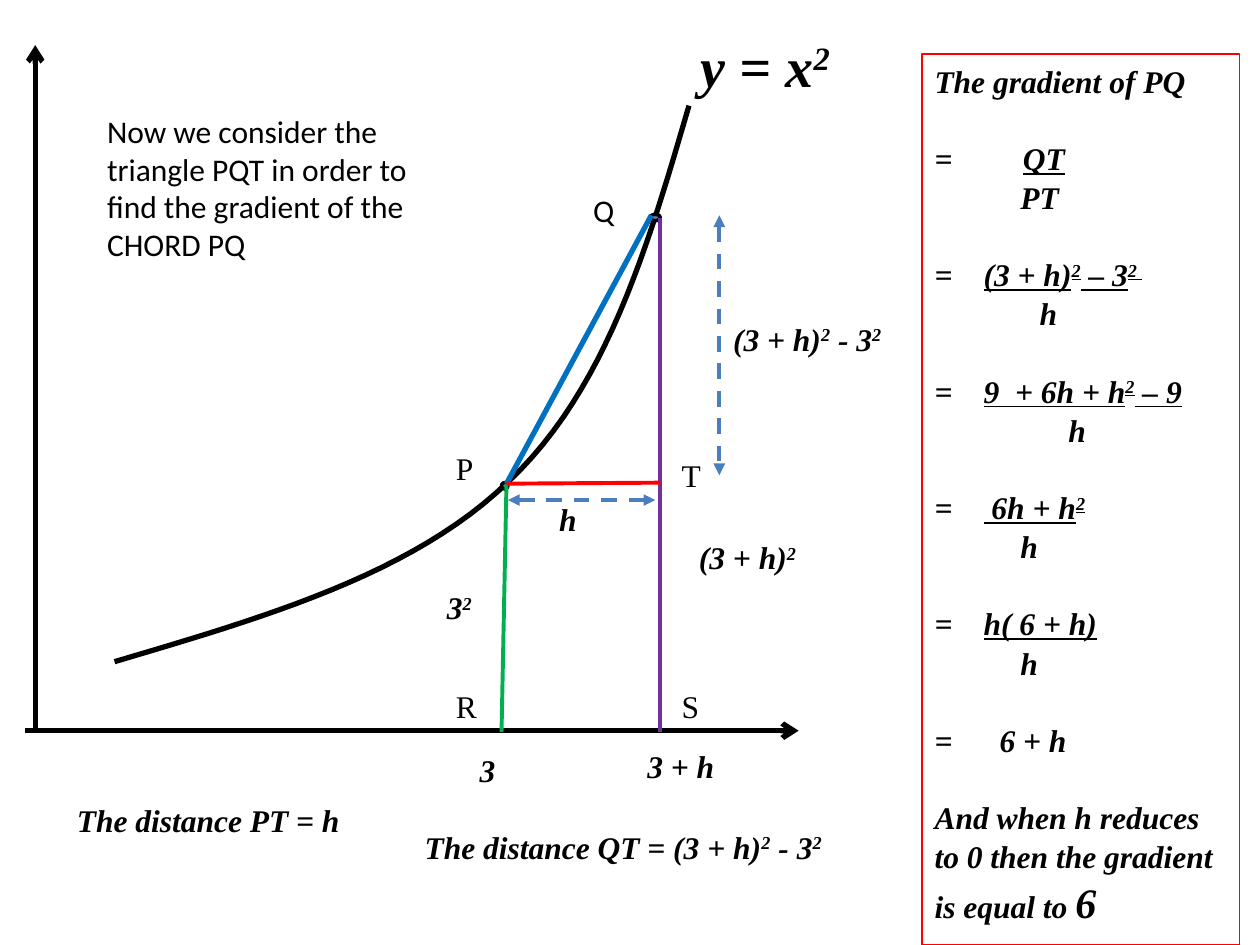
from lxml.etree import SubElement
from pptx import Presentation
from pptx.dml.color import RGBColor
from pptx.enum.dml import MSO_LINE
from pptx.enum.shapes import MSO_CONNECTOR, MSO_SHAPE
from pptx.enum.text import MSO_ANCHOR, MSO_AUTO_SIZE, PP_ALIGN
from pptx.oxml.ns import qn
from pptx.util import Cm, Pt


class Theme:
    ink = RGBColor.from_string("000000")
    red = RGBColor.from_string("FF0000")
    blue = RGBColor.from_string("0070C0")
    green = RGBColor.from_string("00B050")
    plum = RGBColor.from_string("7030A0")
    dash = RGBColor.from_string("4B7EBC")
    dot = RGBColor.from_string("4F81BD")
    serif = "Times New Roman"
    sans = "Calibri"
    text, big, head = Pt(18), Pt(24), Pt(32)
    thin, mid, thick = Pt(0.75), Pt(2.25), Pt(3)


def write(para, text, size=Theme.text, font=Theme.serif, strong=True, under=False):
    for i, part in enumerate(text.split("^")):
        if not part:
            continue
        run = para.add_run()
        run.text = part
        run.font.size = size
        run.font.name = font
        run.font.bold = run.font.italic = strong
        run.font.underline = under
        run.font.color.rgb = Theme.ink
        if i % 2:
            run._r.get_or_add_rPr().set("baseline", "30000")


def draw(start, end, color, width, head=None, tail=None):
    line = slide.shapes.add_connector(
        MSO_CONNECTOR.STRAIGHT, *(Cm(v) for v in start + end))
    line.line.color.rgb = color
    line.line.width = width
    if head:
        line.line.dash_style = MSO_LINE.DASH
    props = line.line._get_or_add_ln()
    for tag, kind in (("a:headEnd", head), ("a:tailEnd", tail)):
        if kind:
            SubElement(props, qn(tag)).set("type", kind)
    SubElement(line._element.spPr, qn("a:effectLst"))


deck = Presentation()
deck.slide_width, deck.slide_height = Cm(25.4), Cm(19.05)
slide = deck.slides.add_slide(deck.slide_layouts[5])

title = slide.shapes.title
title.left, title.top, title.width, title.height = Cm(13.87), Cm(0.51), Cm(4.22), Cm(1.63)
title.text_frame.vertical_anchor = MSO_ANCHOR.TOP
title.text_frame.auto_size = MSO_AUTO_SIZE.NONE
title.text_frame.paragraphs[0].alignment = PP_ALIGN.LEFT
write(title.text_frame.paragraphs[0], "y = x^2", size=Theme.head)

bends = [
    [(2.31, 13.34), (5.31, 12.45), (8.33, 11.58), (10.26, 9.7)],
    [(10.26, 9.7), (12.22, 7.85), (13.06, 4.98), (13.89, 2.13)],
]
steps = 24
points = []
for bend in bends:
    for i in range(1, steps + 1):
        t = i / steps
        mix = ((1 - t) ** 3, 3 * t * (1 - t) ** 2, 3 * t * t * (1 - t), t ** 3)
        points.append(tuple(
            Cm(sum(m * p[axis] for m, p in zip(mix, bend))) for axis in (0, 1)))
pen = slide.shapes.build_freeform(*(Cm(v) for v in bends[0][0]))
pen.add_line_segments(points, close=False)
curve = pen.convert_to_shape()
curve.shadow.inherit = False
curve.fill.background()
curve.line.color.rgb = Theme.ink
curve.line.width = Theme.thick

for left, top, width in [(10.11, 9.73, 0.13), (13.11, 4.32, 0.2)]:
    dot = slide.shapes.add_shape(
        MSO_SHAPE.OVAL, Cm(left), Cm(top), Cm(width), Cm(0.13))
    dot.shadow.inherit = False
    dot.fill.solid()
    dot.fill.fore_color.rgb = Theme.dot
    dot.line.color.rgb = Theme.ink
    dot.line.width = Pt(2)

P, Q = (10.21, 9.75), (13.13, 4.34)
R, S, T = (10.11, 14.76), (13.31, 14.76), (13.31, 9.73)
draw((0.51, 14.73), (16.1, 14.73), Theme.ink, Theme.thick, tail="arrow")
draw((0.71, 14.76), (0.71, 0.91), Theme.ink, Theme.thick, tail="arrow")
draw(P, Q, Theme.blue, Theme.thick)
draw(P, R, Theme.green, Theme.mid)
draw((13.31, 4.39), S, Theme.plum, Theme.mid)
draw(P, T, Theme.red, Theme.mid)
for start, end in [((14.5, 4.34), (14.5, 9.58)), ((10.24, 10.08), (13.21, 10.08))]:
    draw(start, end, Theme.dash, Theme.mid, head="triangle", tail="triangle")

plain = dict(strong=False)
sans = dict(strong=False, font=Theme.sans)
labels = [
    ("P", 8.94, 8.92, 1, plain),
    ("Q", 11.71, 3.73, 1.4, sans),
    ("R", 8.94, 13.72, 1, plain),
    ("S", 13.49, 13.72, 1, plain),
    ("T", 13.49, 9.07, 1, plain),
    ("3", 9.42, 15.01, 1.27, {}),
    ("3 + h", 12.8, 14.94, 2.11, {}),
    ("3^2", 8.76, 11.73, 1.3, {}),
    ("(3 + h)^2", 13.84, 10.72, 2.64, {}),
    ("(3 + h)^2^ - 3^2", 14.53, 6.32, 3.8, {}),
    ("h", 11.02, 9.96, 1.3, {}),
    ("Now we consider the triangle PQT in order to find the gradient of the CHORD PQ",
     1.91, 2.13, 7.04, sans),
    ("The distance PT = h", 1.3, 16.03, 5.99, {}),
    ("The distance QT = (3 + h)^2^ - 3^2", 8.31, 16.56, 9.19, {}),
]
for text, left, top, width, style in labels:
    box = slide.shapes.add_textbox(Cm(left), Cm(top), Cm(width), Cm(1.02))
    box.text_frame.word_wrap = True
    box.text_frame.auto_size = MSO_AUTO_SIZE.SHAPE_TO_FIT_TEXT
    write(box.text_frame.paragraphs[0], text, **style)

panel = slide.shapes.add_shape(
    MSO_SHAPE.RECTANGLE, Cm(18.59), Cm(1.09), Cm(6.4), Cm(17.96))
panel.shadow.inherit = False
panel.fill.background()
panel.line.color.rgb = Theme.red
panel.line.width = Theme.thin
frame = panel.text_frame
frame.word_wrap = True
frame.vertical_anchor = MSO_ANCHOR.TOP

rows = [
    ("", "The gradient of PQ", 0, False),
    ("=\t", "QT", 1.78, True),
    ("", "PT", 1.73, False),
    ("=\t", "(3 + h)^2^ – 3^2 ", 0.99, True),
    ("", "h", 2.12, False),
    ("=\t", "9  + 6h + h^2^ – 9", 0.99, True),
    ("", "h", 2.7, False),
    ("=\t", " 6h + h^2", 0.99, True),
    ("", "h", 1.73, False),
    ("=\t", "h( 6 + h)", 0.99, True),
    ("", "h", 1.73, False),
    ("=\t", "6 + h", 1.31, False),
    ("", "And when h reduces to 0 then the gradient is equal to ", 0, False),
]
for i, (sign, text, inset, under) in enumerate(rows):
    para = frame.add_paragraph() if i else frame.paragraphs[0]
    para.alignment = PP_ALIGN.LEFT
    para.line_spacing = 1.04
    if sign or i == len(rows) - 1:
        para.space_before = Pt(21.6)
    props = para._p.get_or_add_pPr()
    props.set("marL", str(Cm(inset)))
    props.set("indent", str(-Cm(inset) if sign else 0))
    write(para, sign)
    write(para, text, under=under)
write(para, "6", size=Theme.big)

deck.save("out.pptx")
